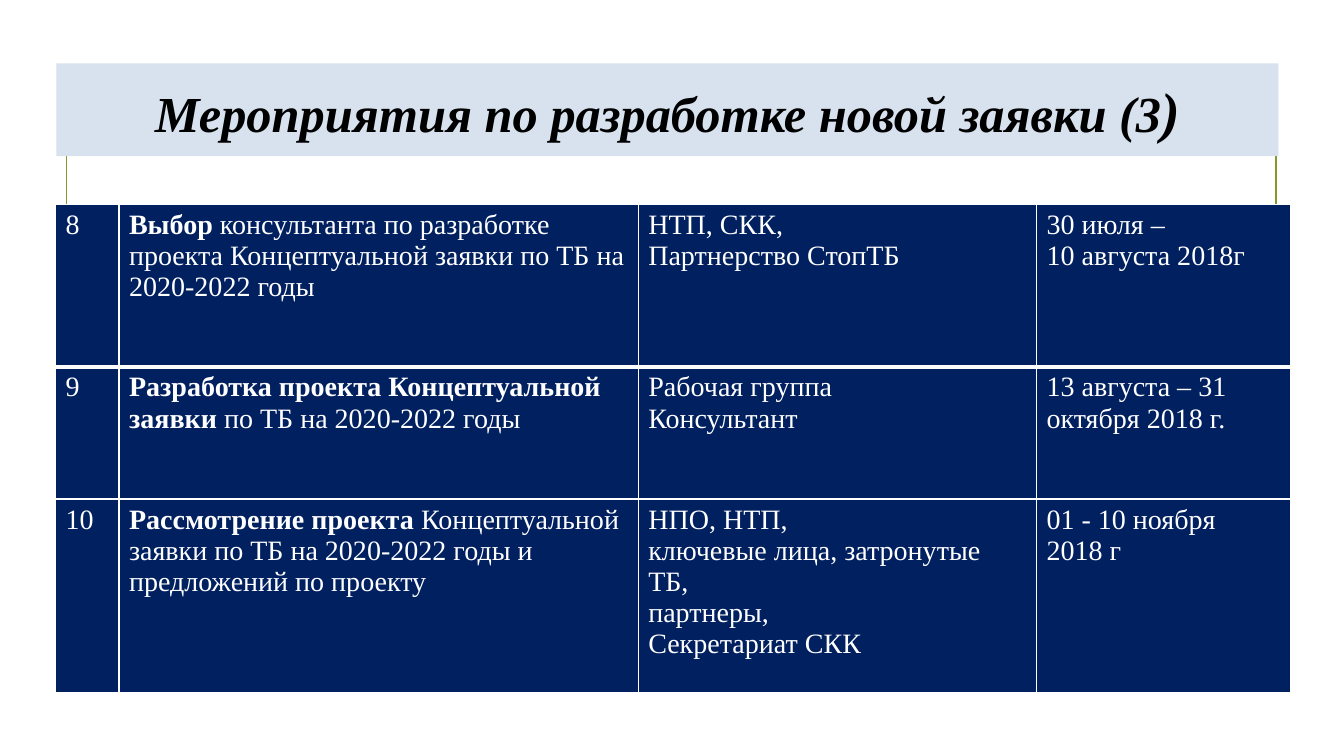
from dataclasses import dataclass

from lxml import etree
from pptx import Presentation
from pptx.dml.color import RGBColor
from pptx.enum.shapes import MSO_SHAPE
from pptx.enum.text import MSO_ANCHOR, PP_ALIGN
from pptx.oxml.ns import qn
from pptx.util import Emu, Pt

RECT = MSO_SHAPE.RECTANGLE
MIDDLE = MSO_ANCHOR.MIDDLE
CENTER = PP_ALIGN.CENTER

NAVY = RGBColor(0x00, 0x20, 0x60)
WHITE = RGBColor(0xFF, 0xFF, 0xFF)
BLACK = RGBColor(0x00, 0x00, 0x00)
PALE = RGBColor(0xD7, 0xE2, 0xEE)
OLIVE = RGBColor(0x83, 0x99, 0x2A)

FONT = "Times New Roman"
SCALE = 9144


@dataclass(frozen=True)
class Box:
    left: int
    top: int
    width: int
    height: int

    def emu(self) -> tuple[Emu, ...]:
        return tuple(map(px, (self.left, self.top, self.width, self.height)))


@dataclass(frozen=True)
class Task:
    number: str
    lead: str
    rest: str
    people: tuple[str, ...]
    dates: tuple[str, ...]
    height: int


FRAME = Box(66, 67, 1200, 617)
TITLE = Box(56, 63, 1212, 92)
GRID = Box(55, 203, 1225, 484)
COLUMNS = (63, 515, 395, 252)
TASKS = (
    Task(
        "8",
        "Выбор ",
        "консультанта по разработке проекта Концептуальной заявки по ТБ на 2020-2022 годы",
        ("НТП, СКК,", "Партнерство СтопТБ"),
        ("30 июля –", "10 августа 2018г"),
        161,
    ),
    Task(
        "9",
        "Разработка проекта Концептуальной заявки ",
        "по ТБ на 2020-2022 годы",
        ("Рабочая группа", "Консультант"),
        ("13 августа – 31 октября 2018 г.",),
        131,
    ),
    Task(
        "10",
        "Рассмотрение проекта ",
        "Концептуальной заявки по ТБ на 2020-2022 годы и предложений по проекту",
        ("НПО, НТП,", "ключевые лица, затронутые ТБ,", "партнеры,", "Секретариат СКК"),
        ("01 - 10 ноября", "2018 г"),
        192,
    ),
)


def px(value: int) -> Emu:
    return Emu(value * SCALE)


def add_rect(slide, box: Box):
    shape = slide.shapes.add_shape(RECT, *box.emu())
    shape.shadow.inherit = False
    return shape


def draw_frame(slide) -> None:
    frame = add_rect(slide, FRAME)
    frame.fill.background()
    frame.line.color.rgb = OLIVE
    frame.line.width = Pt(1.25)


def draw_title(slide) -> None:
    title = add_rect(slide, TITLE)
    title.fill.solid()
    title.fill.fore_color.rgb = PALE
    title.line.fill.background()
    text = title.text_frame
    text.word_wrap = True
    text.vertical_anchor = MIDDLE
    para = text.paragraphs[0]
    para.alignment = CENTER
    font = para.font
    font.name, font.bold, font.italic = FONT, True, True
    font.color.rgb = BLACK
    for words, size in (("Мероприятия по разработке новой заявки (3", 36), (")", 40)):
        run = para.add_run()
        run.text = words
        run.font.size = Pt(size)


def set_edges(cell, top: int, bottom: int) -> None:
    props = cell._tc.get_or_add_tcPr()
    for tag, width in (("lnL", 1), ("lnR", 1), ("lnT", top), ("lnB", bottom)):
        edge = etree.SubElement(props, qn(f"a:{tag}"), w=str(Pt(width)))
        fill = etree.SubElement(edge, qn("a:solidFill"))
        etree.SubElement(fill, qn("a:srgbClr"), val=str(WHITE))


def fill_cell(cell, lines: tuple[str, ...], lead: str = "") -> None:
    cell.fill.solid()
    cell.fill.fore_color.rgb = NAVY
    text = cell.text_frame
    text.text = "\n".join(lines)
    if lead:
        para = text.paragraphs[0]
        para.clear()
        for words, bold in ((lead, True), (lines[0], False)):
            run = para.add_run()
            run.text = words
            run.font.bold = bold
    for para in text.paragraphs:
        para.font.name = FONT
        para.font.size = Pt(20)
        para.font.color.rgb = WHITE


def draw_table(slide) -> None:
    table = slide.shapes.add_table(len(TASKS), len(COLUMNS), *GRID.emu()).table
    table.first_row = False
    table.horz_banding = False
    for column, width in zip(table.columns, COLUMNS):
        column.width = px(width)
    for index, (row, task) in enumerate(zip(table.rows, TASKS)):
        row.height = px(task.height)
        top = 3 if index == 1 else 1
        bottom = 3 if index == 0 else 1
        for cell in row.cells:
            set_edges(cell, top, bottom)
        number, action, people, dates = row.cells
        fill_cell(number, (task.number,))
        fill_cell(action, (task.rest,), task.lead)
        fill_cell(people, task.people)
        fill_cell(dates, task.dates)


def main() -> None:
    deck = Presentation()
    deck.slide_width = px(1333)
    deck.slide_height = px(750)
    slide = deck.slides.add_slide(deck.slide_layouts[6])
    draw_frame(slide)
    draw_title(slide)
    draw_table(slide)
    deck.save("out.pptx")


if __name__ == "__main__":
    main()
